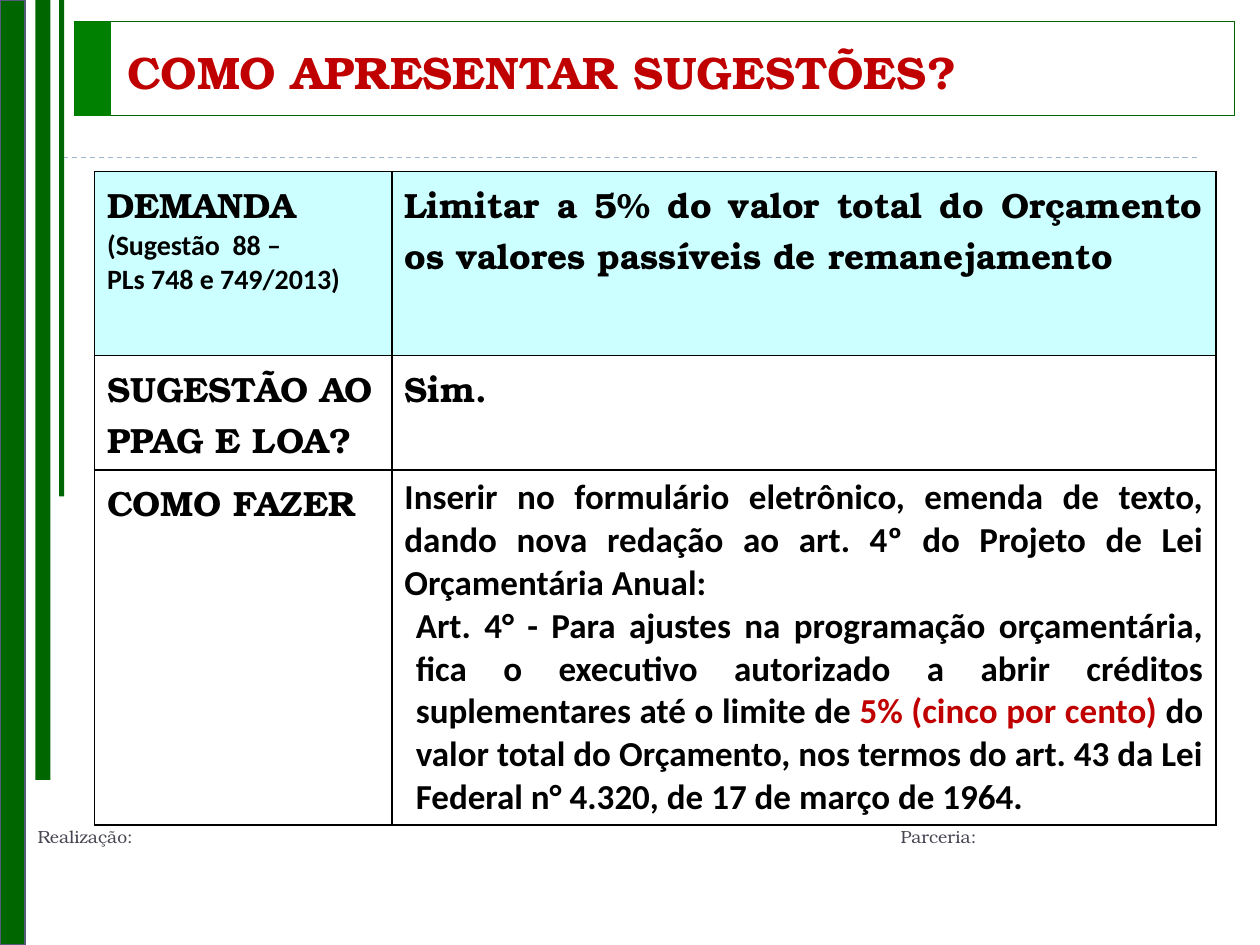
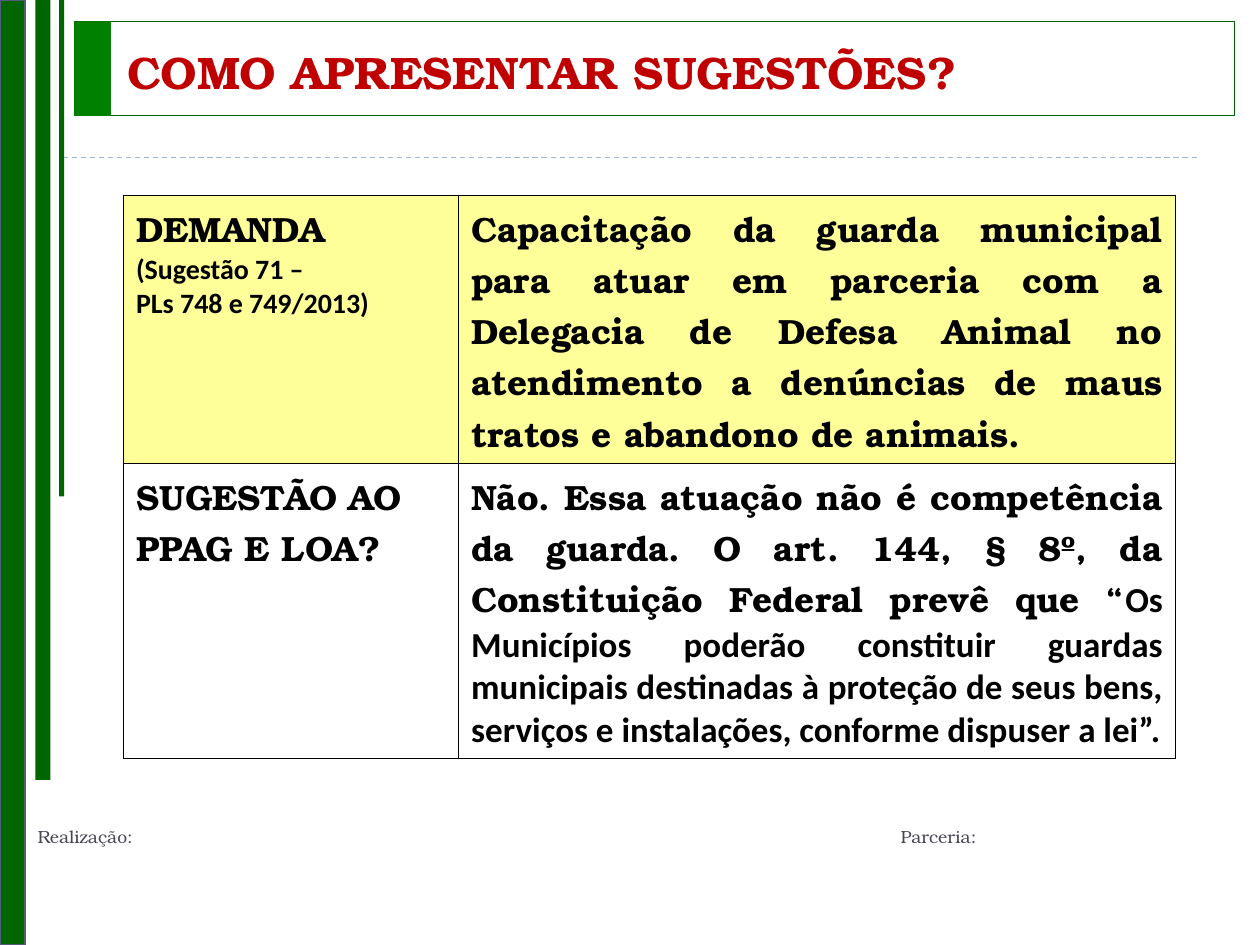
import pptx
import pptx.dml.color
import pptx.enum.dml
import pptx.enum.shapes
import pptx.enum.text
import pptx.oxml
import pptx.oxml.ns
import pptx.util
from lxml import etree

Inches = pptx.util.Inches
Pt = pptx.util.Pt
RGBColor = pptx.dml.color.RGBColor
Align = pptx.enum.text.PP_ALIGN
qn = pptx.oxml.ns.qn

DARK_GREEN = RGBColor(0x00, 0x66, 0x00)
GREEN = RGBColor(0x00, 0x80, 0x00)
SLATE = RGBColor(0x54, 0x5C, 0x79)
PALE_BLUE = RGBColor(0x9F, 0xB8, 0xCD)
GREY = RGBColor(0x46, 0x46, 0x53)
RED = RGBColor(0xC0, 0x00, 0x00)
BLACK = RGBColor(0x00, 0x00, 0x00)
WHITE = RGBColor(0xFF, 0xFF, 0xFF)
CYAN = RGBColor(0xCC, 0xFF, 0xFF)
YELLOW = RGBColor(0xFF, 0xFF, 0x99)

SERIF = "TeX Gyre Bonum"
SANS = "Calibri"
TITLE = "COMO APRESENTAR SUGESTÕES?"


def run(text, font=SERIF, size=20, color=BLACK):
    return text, font, size, color


def demand_label(suggestion):
    return [[run("DEMANDA")],
            [run(suggestion, SANS, 16)],
            [run("PLs 748 e 749/2013)", SANS, 16)]]


SUGGESTION_LABEL = [[run("SUGESTÃO AO")], [run("PPAG E LOA?")]]


class Deck:
    def __init__(self):
        self.presentation = pptx.Presentation()
        self.presentation.slide_width = Inches(10)
        self.presentation.slide_height = Inches(7.5)
        self.slide = None

    def add_slide(self):
        """Start a slide with the shared bands, title and footer."""
        layout = self.presentation.slide_layouts.get_by_name("Title Only")
        self.slide = self.presentation.slides.add_slide(layout)
        self.add_band(0.28, 0, 0.12, 6.19, DARK_GREEN)
        self.add_dashed_line(0.5, 9.5, 1.25)
        self.add_band(0.59, 0.17, 9.21, 0.75, None, DARK_GREEN, 0.5)
        self.add_band(0.59, 0.17, 0.29, 0.75, GREEN)
        self.add_band(0, 0, 0.2, 7.5, DARK_GREEN, SLATE, 1.5)
        self.add_band(0.47, 0, 0.04, 3.94, DARK_GREEN)
        self.add_footer()
        self.add_title()

    def add_band(self, left, top, width, height, fill, line=None, line_width=0):
        shape = self.slide.shapes.add_shape(
            pptx.enum.shapes.MSO_SHAPE.RECTANGLE,
            Inches(left), Inches(top), Inches(width), Inches(height))
        shape.shadow.inherit = False
        if fill is None:
            shape.fill.background()
        else:
            shape.fill.solid()
            shape.fill.fore_color.rgb = fill
        if line is None:
            shape.line.fill.background()
        else:
            shape.line.color.rgb = line
            shape.line.width = Pt(line_width)

    def add_dashed_line(self, left, right, top):
        connector = self.slide.shapes.add_connector(
            pptx.enum.shapes.MSO_CONNECTOR.STRAIGHT,
            Inches(left), Inches(top), Inches(right), Inches(top))
        connector.line.color.rgb = PALE_BLUE
        connector.line.width = Pt(0.75)
        connector.line.dash_style = pptx.enum.dml.MSO_LINE.DASH
        etree.SubElement(connector._element.spPr, qn("a:effectLst"))

    def add_title(self):
        title = self.slide.shapes.title
        title.left, title.top = Inches(0.91), Inches(0.29)
        title.width, title.height = Inches(8.52), Inches(0.55)
        frame = title.text_frame
        frame.auto_size = pptx.enum.text.MSO_AUTO_SIZE.NONE
        frame.vertical_anchor = pptx.enum.text.MSO_ANCHOR.MIDDLE
        paragraph = frame.paragraphs[0]
        paragraph.alignment = Align.LEFT
        self.add_run(paragraph, run(TITLE, size=26, color=RED))

    def add_footer(self):
        box = self.slide.shapes.add_textbox(
            Inches(0.2), Inches(6.51), Inches(9.55), Inches(0.31))
        box.text_frame.word_wrap = True
        paragraph = box.text_frame.paragraphs[0]
        paragraph.space_before = Pt(6)
        tabs = etree.SubElement(paragraph._p.get_or_add_pPr(), qn("a:tabLst"))
        etree.SubElement(tabs, qn("a:tab"), pos=str(Inches(6.85)), algn="l")
        self.add_run(paragraph, run("Realização:\tParceria:", size=10, color=GREY),
                     bold=False)

    def add_run(self, paragraph, piece, bold=True):
        text, font, size, color = piece
        new_run = paragraph.add_run()
        new_run.text = text
        new_run.font.name = font
        new_run.font.size = Pt(size)
        new_run.font.bold = bold
        new_run.font.color.rgb = color

    def add_table(self, left, top, widths, heights, rows, header_fill):
        table = self.slide.shapes.add_table(
            len(rows), len(widths), Inches(left), Inches(top),
            Inches(sum(widths)), Inches(sum(heights))).table
        table.first_row = table.horz_banding = False
        for column, width in zip(table.columns, widths):
            column.width = Inches(width)
        for row_index, (height, row) in enumerate(zip(heights, rows)):
            table.rows[row_index].height = Inches(height)
            fill = WHITE if row_index else header_fill
            for column_index, paragraphs in enumerate(row):
                alignment = Align.JUSTIFY if column_index else Align.LEFT
                self.fill_cell(table.cell(row_index, column_index),
                               paragraphs, fill, alignment)
        return table

    def fill_cell(self, cell, paragraphs, fill, alignment):
        cell.fill.solid()
        cell.fill.fore_color.rgb = fill
        self.add_borders(cell)
        frame = cell.text_frame
        for index, pieces in enumerate(paragraphs):
            paragraph = frame.add_paragraph() if index else frame.paragraphs[0]
            paragraph.alignment = alignment
            for piece in pieces:
                self.add_run(paragraph, piece)

    def add_borders(self, cell):
        properties = cell._tc.get_or_add_tcPr()
        for index, side in enumerate(("a:lnL", "a:lnR", "a:lnT", "a:lnB")):
            border = etree.Element(qn(side), w=str(Pt(1)))
            solid = etree.SubElement(border, qn("a:solidFill"))
            etree.SubElement(solid, qn("a:srgbClr"), val=str(BLACK))
            properties.insert(index, border)


def add_budget_limit_slide(deck):
    deck.add_slide()
    article = [
        run("Art. 4° - Para ajustes na programação orçamentária, fica o executivo "
            "autorizado a abrir créditos suplementares até o limite de ", SANS),
        run("5% (cinco por cento)", SANS, color=RED),
        run(" do valor total do Orçamento, nos termos do art. 43 da Lei Federal "
            "n° 4.320, de 17 de março de 1964.", SANS),
    ]
    rows = [
        [demand_label("(Sugestão  88 –"),
         [[run("Limitar a 5% do valor total do Orçamento os valores passíveis "
               "de remanejamento")]]],
        [SUGGESTION_LABEL, [[run("Sim.")]]],
        [[[run("COMO FAZER")]],
         [[run("Inserir no formulário eletrônico, emenda de texto, dando nova "
               "redação ao art. 4º do Projeto de Lei Orçamentária Anual:", SANS)],
          article]],
    ]
    table = deck.add_table(0.75, 1.36, (2.36, 6.54), (1.46, 0.91, 2.82), rows, CYAN)
    article_paragraph = table.cell(2, 1).text_frame.paragraphs[1]
    article_paragraph._p.get_or_add_pPr().set("marL", str(Inches(0.09)))


def add_municipal_guard_slide(deck):
    deck.add_slide()
    rows = [
        [demand_label("(Sugestão 71 –"),
         [[run("Capacitação da guarda municipal para atuar em parceria com a "
               "Delegacia de Defesa Animal no atendimento a denúncias de maus "
               "tratos e abandono de animais.")]]],
        [SUGGESTION_LABEL,
         [[run("Não. Essa atuação não é competência da guarda. O art. 144, § 8º, "
               "da Constituição Federal prevê que “"),
           run("Os Municípios poderão constituir guardas municipais destinadas à "
               "proteção de seus bens, serviços e instalações, conforme dispuser "
               "a lei”.", SANS)]]],
    ]
    deck.add_table(0.98, 1.55, (2.66, 5.69), (2.13, 2.34), rows, YELLOW)


def main():
    deck = Deck()
    add_budget_limit_slide(deck)
    add_municipal_guard_slide(deck)
    deck.presentation.save("out.pptx")


if __name__ == "__main__":
    main()
